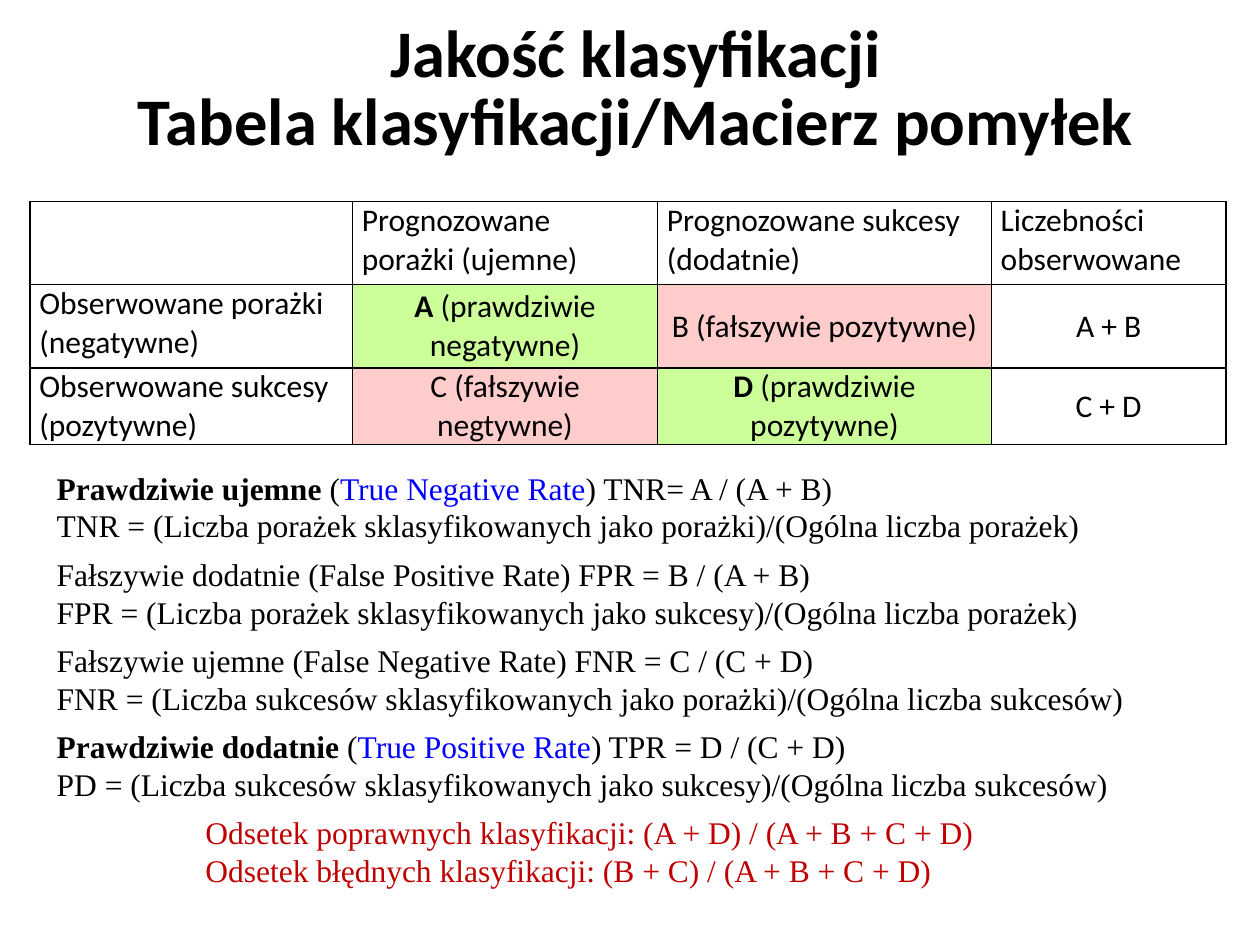
from lxml.etree import SubElement
from pptx import Presentation
from pptx.dml.color import RGBColor
from pptx.enum.text import MSO_ANCHOR as Anchor, MSO_AUTO_SIZE as AutoSize, PP_ALIGN as Align
from pptx.oxml import parse_xml
from pptx.oxml.ns import nsdecls, qn
from pptx.util import Pt

BLACK, BLUE, RED = "000000", "0000FF", "C00000"
GREEN_FILL, PINK_FILL = "CCFF99", "FFCCCC"

TITLE = ["Jakość klasyfikacji", "Tabela klasyfikacji/Macierz pomyłek"]
COLUMN_WIDTHS = [184.3, 174.3, 190.8, 133.9]
ROW_HEIGHTS = [47.5, 47.5, 42]
MATRIX = [
    ["", "Prognozowane porażki (ujemne)", "Prognozowane sukcesy (dodatnie)",
     "Liczebności obserwowane"],
    ["Obserwowane porażki (negatywne)", ("A", " (prawdziwie negatywne)"),
     "B (fałszywie pozytywne)", "A + B"],
    ["Obserwowane sukcesy (pozytywne)", "C (fałszywie negtywne)",
     ("D", " (prawdziwie pozytywne)"), "C + D"],
]
RATES = [
    (("Prawdziwie ujemne", " (", "True Negative Rate", ") TNR= A / (A + B)"),
     "TNR = (Liczba porażek sklasyfikowanych jako porażki)/(Ogólna liczba porażek)"),
    ("Fałszywie dodatnie (False Positive Rate) FPR = B / (A + B)",
     "FPR = (Liczba porażek sklasyfikowanych jako sukcesy)/(Ogólna liczba porażek)"),
    ("Fałszywie ujemne (False Negative Rate) FNR = C / (C + D)",
     "FNR = (Liczba sukcesów sklasyfikowanych jako porażki)/(Ogólna liczba sukcesów)"),
    (("Prawdziwie dodatnie", " (", "True Positive Rate", ") TPR = D / (C + D)"),
     "PD = (Liczba sukcesów sklasyfikowanych jako sukcesy)/(Ogólna liczba sukcesów)"),
]
SUMMARY = [
    "Odsetek poprawnych klasyfikacji: (A + D) / (A + B + C + D)",
    "Odsetek błędnych klasyfikacji: (B + C) / (A + B + C + D)",
]


def rgb(value):
    """Turn a hex string into a colour."""
    return RGBColor.from_string(value)


def place(shape, left, top, width, height):
    """Move and size a shape, in points."""
    shape.left, shape.top, shape.width, shape.height = map(Pt, (left, top, width, height))


def set_font(paragraph, name, size, color=BLACK):
    """Set the font shared by all runs of a paragraph."""
    font = paragraph.font
    font.name, font.size, font.color.rgb = name, Pt(size), rgb(color)


def write(paragraph, content):
    """Write plain text, or parts with a bold term first and a blue term third."""
    parts = (content,) if isinstance(content, str) else content
    for index, part in enumerate(parts):
        run = paragraph.add_run()
        run.text = part
        if len(parts) > 1 and index == 0:
            run.font.bold = True
        if index == 2:
            run.font.color.rgb = rgb(BLUE)


def next_paragraph(frame):
    """Return the first paragraph while it is empty, else a new one."""
    first = frame.paragraphs[0]
    return frame.add_paragraph() if first.runs else first


def add_title(title):
    """Fill the title placeholder."""
    place(title, 5, 3.6, 717, 96.5)
    frame = title.text_frame
    frame.auto_size, frame.vertical_anchor = AutoSize.NONE, Anchor.MIDDLE
    for line in TITLE:
        paragraph = next_paragraph(frame)
        write(paragraph, line)
        set_font(paragraph, "Calibri", 38)
        paragraph.font.bold = True
        paragraph.alignment, paragraph.line_spacing = Align.CENTER, Pt(39)


def add_borders(cell):
    """Draw thin black lines around a cell."""
    properties = cell._tc.get_or_add_tcPr()
    for index, side in enumerate(("lnL", "lnR", "lnT", "lnB")):
        line = parse_xml(f'<a:{side} {nsdecls("a")} w="{Pt(1)}"/>')
        SubElement(SubElement(line, qn("a:solidFill")), qn("a:srgbClr"), val=BLACK)
        properties.insert(index, line)


def fill_cell(cell, content, row, column):
    """Write and format one cell according to its place in the matrix."""
    cell.margin_left = cell.margin_right = Pt(5.3)
    cell.margin_top = cell.margin_bottom = 0
    paragraph = cell.text_frame.paragraphs[0]
    if content:
        write(paragraph, content)
    set_font(paragraph, "Calibri", 18)
    if row and column:
        cell.vertical_anchor, paragraph.alignment = Anchor.MIDDLE, Align.CENTER
    if row and column in (1, 2):
        cell.fill.solid()
        cell.fill.fore_color.rgb = rgb(GREEN_FILL if row == column else PINK_FILL)
    else:
        cell.fill.background()
    add_borders(cell)


def add_matrix(slide):
    """Add the confusion matrix."""
    table = slide.shapes.add_table(
        len(ROW_HEIGHTS), len(COLUMN_WIDTHS), Pt(17.2), Pt(115.2),
        Pt(sum(COLUMN_WIDTHS)), Pt(sum(ROW_HEIGHTS))).table
    table.first_row = table.horz_banding = False
    for column, width in zip(table.columns, COLUMN_WIDTHS):
        column.width = Pt(width)
    for row, height in zip(table.rows, ROW_HEIGHTS):
        row.height = Pt(height)
    for row, contents in enumerate(MATRIX):
        for column, content in enumerate(contents):
            fill_cell(table.cell(row, column), content, row, column)


def add_formula(frame, content, color=BLACK, indent=0, after=0):
    """Add one unbulleted formula line."""
    paragraph = next_paragraph(frame)
    write(paragraph, content)
    paragraph.space_before, paragraph.space_after = Pt(0), Pt(after)
    properties = paragraph._p.get_or_add_pPr()
    properties.set("marL", str(Pt(indent)))
    properties.set("indent", "0")
    SubElement(properties, qn("a:buNone"))
    set_font(paragraph, "Times New Roman", 18, color)


def add_formulas(body):
    """Fill the body placeholder with the rates and the summary."""
    place(body, 25.2, 264.2, 669, 250)
    frame = body.text_frame
    frame.auto_size = AutoSize.NONE
    for definition, wording in RATES:
        add_formula(frame, definition)
        add_formula(frame, wording, after=6)
    for line in SUMMARY:
        add_formula(frame, line, RED, indent=85)


def main():
    """Build and save the slide."""
    deck = Presentation()
    deck.slide_width, deck.slide_height = Pt(720), Pt(540)
    slide = deck.slides.add_slide(deck.slide_layouts[1])
    add_title(slide.shapes.title)
    add_formulas(slide.placeholders[1])
    add_matrix(slide)
    deck.save("out.pptx")


if __name__ == "__main__":
    main()
